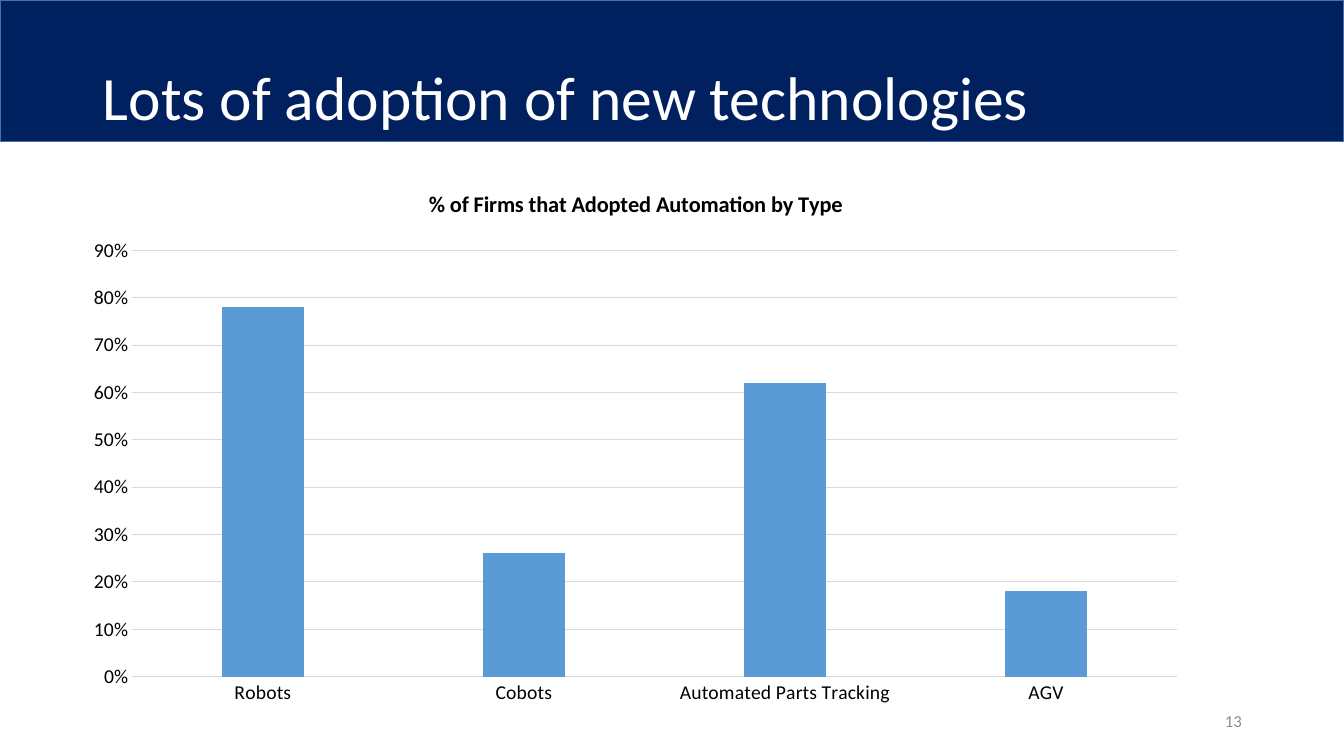
from dataclasses import dataclass
from typing import Any

import lxml.etree
import pptx
import pptx.chart.data
import pptx.dml.color
import pptx.enum.chart
import pptx.enum.shapes
import pptx.enum.text
import pptx.oxml
import pptx.oxml.ns
import pptx.util

Cm = pptx.util.Cm
Pt = pptx.util.Pt
Align = pptx.enum.text.PP_ALIGN


@dataclass(frozen=True)
class Theme:
    font: str = "Calibri"
    banner: str = "002060"
    banner_line: str = "43739E"
    bar: str = "5B9BD5"
    grid: str = "D9D9D9"
    light_text: str = "FFFFFF"
    dark_text: str = "000000"
    muted_text: str = "8C8C8C"
    title_size: int = 44
    chart_title_size: int = 16
    chart_size: int = 14
    number_size: int = 12


@dataclass(frozen=True)
class Box:
    left: float
    top: float
    width: float
    height: float

    def lengths(self) -> tuple:
        return Cm(self.left), Cm(self.top), Cm(self.width), Cm(self.height)


@dataclass(frozen=True)
class Label:
    text: str
    box: Box
    size: int
    color: str
    alignment: Any
    line_spacing: float


THEME = Theme()
SLIDE_BOX = Box(0, 0, 33.87, 19.05)
BANNER_BOX = Box(0, 0, 33.87, 3.56)
CHART_BOX = Box(1.8, 4.24, 28.45, 13.79)
PLOT_LAYOUT = {"x": 0.054, "y": 0.15, "w": 0.925, "h": 0.779}
LABELS = [
    Label("Lots of adoption of new technologies", Box(2.34, 0.69, 29.21, 3.68),
          THEME.title_size, THEME.light_text, Align.LEFT, 0.9),
    Label("13", Box(23.93, 17.65, 7.62, 1.02),
          THEME.number_size, THEME.muted_text, Align.RIGHT, 1.0),
]
CHART_TITLE = "% of Firms that Adopted Automation by Type"
ADOPTION = {"Robots": 0.78, "Cobots": 0.26, "Automated Parts Tracking": 0.62, "AGV": 0.18}


def apply(target: Any, values: dict[str, Any]) -> None:
    for name, value in values.items():
        setattr(target, name, value)


def rgb(color: str) -> pptx.dml.color.RGBColor:
    return pptx.dml.color.RGBColor.from_string(color)


def style_font(font: Any, size: int, color: str, bold: bool = False) -> None:
    apply(font, {"name": THEME.font, "size": Pt(size), "bold": bold})
    font.color.rgb = rgb(color)


def style_fill(target: Any, color: str) -> None:
    target.fill.solid()
    target.fill.fore_color.rgb = rgb(color)


def style_line(line: Any, color: str, width: float) -> None:
    line.color.rgb = rgb(color)
    line.width = Pt(width)


def draw_banner(slide: Any) -> None:
    shape = slide.shapes.add_shape(
        pptx.enum.shapes.MSO_SHAPE.RECTANGLE, *BANNER_BOX.lengths())
    shape.shadow.inherit = False
    style_fill(shape, THEME.banner)
    style_line(shape.line, THEME.banner_line, 1)


def draw_label(slide: Any, label: Label) -> None:
    frame = slide.shapes.add_textbox(*label.box.lengths()).text_frame
    apply(frame, {"word_wrap": True,
                  "vertical_anchor": pptx.enum.text.MSO_ANCHOR.MIDDLE})
    paragraph = frame.paragraphs[0]
    apply(paragraph, {"text": label.text, "alignment": label.alignment,
                      "line_spacing": label.line_spacing})
    style_font(paragraph.runs[0].font, label.size, label.color)


def place_plot(chart: Any) -> None:
    qualified = pptx.oxml.ns.qn
    plot_area = chart.plots[0]._element.getparent()
    for old_layout in plot_area.findall(qualified("c:layout")):
        plot_area.remove(old_layout)
    layout = lxml.etree.Element(qualified("c:layout"))
    manual = lxml.etree.SubElement(layout, qualified("c:manualLayout"))
    settings = {"layoutTarget": "inner", "xMode": "edge", "yMode": "edge", **PLOT_LAYOUT}
    for name, value in settings.items():
        lxml.etree.SubElement(manual, qualified(f"c:{name}")).set("val", str(value))
    plot_area.insert(0, layout)


def draw_chart(slide: Any) -> None:
    chart_data = pptx.chart.data.CategoryChartData(number_format="0%")
    chart_data.categories = list(ADOPTION)
    chart_data.add_series("Series 1", list(ADOPTION.values()))
    chart = slide.shapes.add_chart(
        pptx.enum.chart.XL_CHART_TYPE.COLUMN_CLUSTERED,
        *CHART_BOX.lengths(), chart_data).chart
    apply(chart, {"has_legend": False, "has_title": True})
    style_font(chart.font, THEME.chart_size, THEME.dark_text)

    title = chart.chart_title
    title.include_in_layout = False
    title.text_frame.text = CHART_TITLE
    style_font(title.text_frame.paragraphs[0].runs[0].font,
               THEME.chart_title_size, THEME.dark_text, bold=True)

    plot = chart.plots[0]
    apply(plot, {"gap_width": 219, "overlap": -27, "vary_by_categories": False})
    style_fill(plot.series[0].format, THEME.bar)

    no_tick = pptx.enum.chart.XL_TICK_MARK.NONE
    for axis in (chart.category_axis, chart.value_axis):
        apply(axis, {"major_tick_mark": no_tick, "minor_tick_mark": no_tick})
    style_line(chart.category_axis.format.line, THEME.grid, 0.75)
    value_axis = chart.value_axis
    apply(value_axis, {"minimum_scale": 0, "maximum_scale": 0.9, "major_unit": 0.1,
                       "has_major_gridlines": True})
    apply(value_axis.tick_labels, {"number_format": "0%", "number_format_is_linked": False})
    value_axis.format.line.fill.background()
    style_line(value_axis.major_gridlines.format.line, THEME.grid, 0.75)
    place_plot(chart)


def main() -> None:
    presentation = pptx.Presentation()
    apply(presentation, {"slide_width": Cm(SLIDE_BOX.width),
                         "slide_height": Cm(SLIDE_BOX.height)})
    slide = presentation.slides.add_slide(presentation.slide_layouts[6])
    draw_banner(slide)
    for label in LABELS:
        draw_label(slide, label)
    draw_chart(slide)
    presentation.save("out.pptx")


if __name__ == "__main__":
    main()
